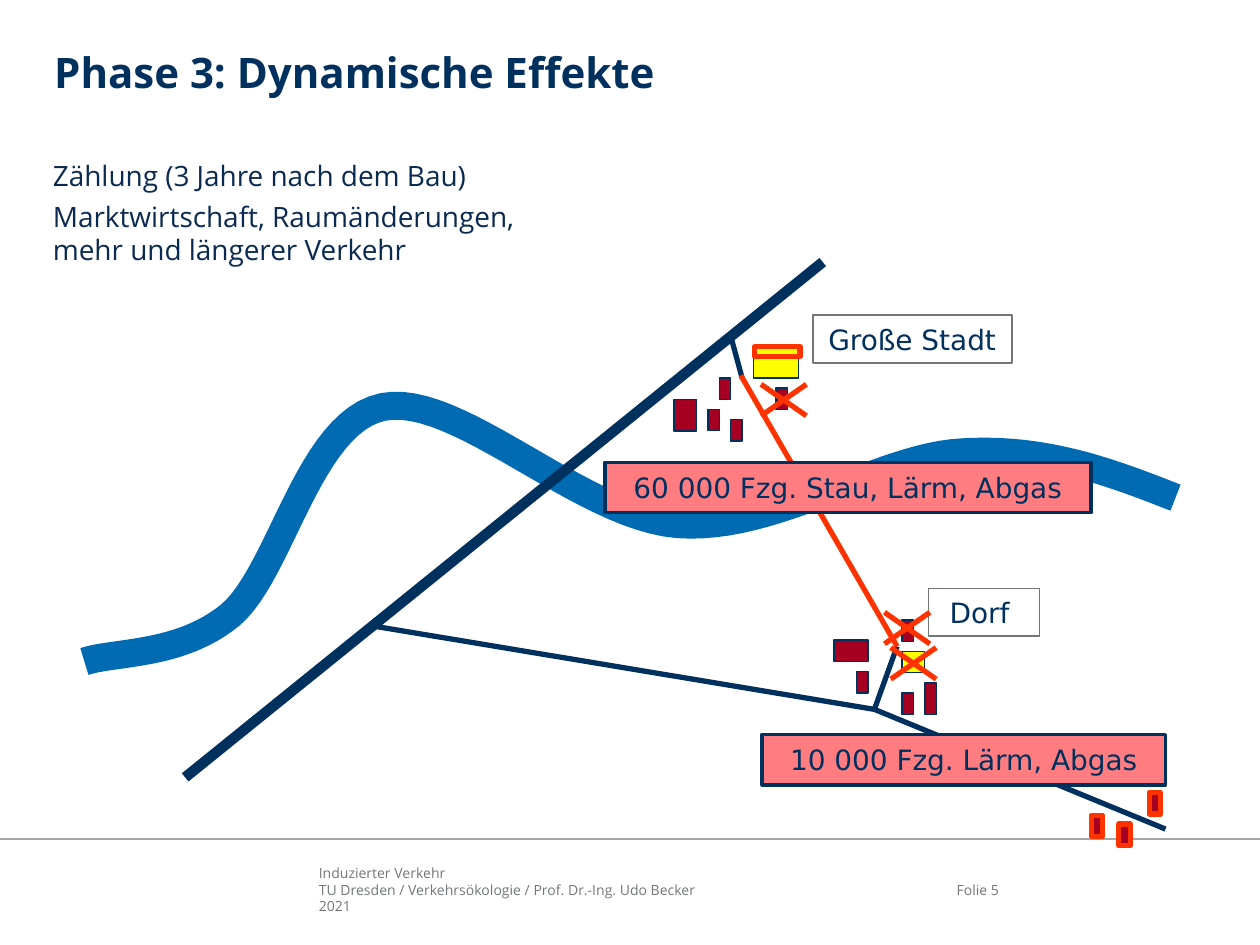
from lxml import etree
from pptx import Presentation
from pptx.dml.color import RGBColor
from pptx.enum.shapes import MSO_CONNECTOR as Connector, MSO_SHAPE as Shape
from pptx.enum.text import MSO_ANCHOR as Anchor, PP_ALIGN as Align
from pptx.oxml.ns import qn
from pptx.util import Inches, Pt

NAVY = RGBColor(0x00, 0x30, 0x5E)
BODY_BLUE = RGBColor(0x0B, 0x2A, 0x51)
RIVER_BLUE = RGBColor(0x00, 0x6A, 0xB3)
GREY = RGBColor(0x72, 0x78, 0x79)
RULE_GREY = RGBColor(0xA6, 0xA6, 0xA6)
YELLOW = RGBColor(0xFF, 0xFF, 0x00)
DARK_RED = RGBColor(0xA5, 0x00, 0x21)
ORANGE = RGBColor(0xFF, 0x33, 0x00)
PINK = RGBColor(0xFF, 0x7C, 0x80)
TEXT_FONT, LABEL_FONT = "Open Sans", "DejaVu Sans"

TITLE = ["Phase 3: Dynamische Effekte"]
BODY = ["Zählung (3 Jahre nach dem Bau)",
        "Marktwirtschaft, Raumänderungen, \vmehr und längerer Verkehr"]
FOOTER = ["Induzierter Verkehr",
          "TU Dresden / Verkehrsökologie / Prof. Dr.-Ing. Udo Becker",
          "2021"]
PAGE = ["Folie 5"]

# River: start point, then Bézier segments (control, control, end)
RIVER_START = (9.33, 3.95)
RIVER_CURVES = [
    ((8.82, 3.75), (8.3, 3.55), (7.64, 3.59)),
    ((6.98, 3.62), (6.15, 4.22), (5.38, 4.16)),
    ((4.61, 4.1), (3.63, 3.11), (3.04, 3.23)),
    ((2.45, 3.35), (2.23, 4.54), (1.83, 4.88)),
    ((1.43, 5.21), (0.91, 5.17), (0.67, 5.25)),
]
CURVE_STEPS = 24

JUNCTION, VILLAGE = (6.94, 5.63), (7.12, 5.13)
MOTORWAY = ((1.47, 6.17), (6.53, 2.08))
ROADS = [((5.89, 3), (5.8, 2.67)), (JUNCTION, VILLAGE),
         (JUNCTION, (2.97, 4.97)), (JUNCTION, (9.25, 6.58))]
CONGESTED_ROAD = ((5.88, 2.98), VILLAGE)

HOUSE = (0.09, 0.17)
SHOPS = [(5.98, 2.75, 0.36, 0.25), (7.16, 5.17, 0.18, 0.17)]
SHOP_EXTENSION = (5.99, 2.75, 0.36, 0.08)
LARGE_HOUSES = [(6.62, 5.08, 0.27, 0.17), (7.34, 5.42, 0.09, 0.25),
                (5.35, 3.17, 0.18, 0.25)]
HOUSES = [(7.16, 5.5), (7.16, 4.92), (6.8, 5.33), (5.8, 3.33),
          (6.16, 3.08), (5.71, 3), (5.62, 3.25)]
NEW_HOUSES = [(9.12, 6.29), (8.88, 6.54), (8.66, 6.47)]

CROSS_WIDTH, CROSS_HEIGHT = 0.36, 0.25
CROSSES = [(6.04, 3.05), (7.02, 4.86), (7.07, 5.14)]

PLACE_LABELS = [("Dorf ", (7.37, 4.67, 0.88, 0.38)),
                ("Große Stadt", (6.45, 2.5, 1.58, 0.38))]
TRAFFIC_LABELS = [("60 000 Fzg. Stau, Lärm, Abgas", (4.8, 3.67, 3.86, 0.4)),
                  ("10 000 Fzg. Lärm, Abgas", (6.05, 5.83, 3.2, 0.4))]

presentation = Presentation()
presentation.slide_width, presentation.slide_height = Inches(10), Inches(7.5)
slide = presentation.slides.add_slide(presentation.slide_layouts[6])


def add_text(lines, box, size, color, bold=False, align=Align.LEFT,
             anchor=Anchor.TOP, gap=0):
    frame = slide.shapes.add_textbox(*map(Inches, box)).text_frame
    frame.word_wrap = True
    frame.vertical_anchor = anchor
    frame.margin_left = frame.margin_right = 0
    frame.margin_top = frame.margin_bottom = 0
    for index, line in enumerate(lines):
        paragraph = frame.add_paragraph() if index else frame.paragraphs[0]
        paragraph.text = line
        paragraph.alignment = align
        if index and gap:
            paragraph.space_before = Pt(gap)
        font = paragraph.font
        font.name, font.size, font.bold = TEXT_FONT, Pt(size), bold
        font.color.rgb = color


def add_line(ends, color, width):
    start, end = ends
    line = slide.shapes.add_connector(
        Connector.STRAIGHT, *map(Inches, (*start, *end)))
    line.line.color.rgb = color
    line.line.width = Pt(width)
    etree.SubElement(line._element.spPr, qn("a:effectLst"))


def add_box(box, fill, color, width):
    shape = slide.shapes.add_shape(Shape.RECTANGLE, *map(Inches, box))
    shape.shadow.inherit = False
    if fill is None:
        shape.fill.background()
    else:
        shape.fill.solid()
        shape.fill.fore_color.rgb = fill
    shape.line.color.rgb = color
    shape.line.width = Pt(width)
    return shape


def add_label(text, box, fill, color, width):
    frame = add_box(box, fill, color, width).text_frame
    frame.word_wrap = True
    frame.vertical_anchor = Anchor.MIDDLE
    paragraph = frame.paragraphs[0]
    paragraph.text = text
    paragraph.alignment = Align.CENTER
    font = paragraph.font
    font.name, font.size = LABEL_FONT, Pt(16)
    font.color.rgb = NAVY


def bezier_point(points, t):
    weights = ((1 - t) ** 3, 3 * t * (1 - t) ** 2, 3 * t * t * (1 - t), t ** 3)
    return tuple(Inches(sum(w * point[axis] for w, point in zip(weights, points)))
                 for axis in (0, 1))


def add_river():
    builder = slide.shapes.build_freeform(*map(Inches, RIVER_START))
    start = RIVER_START
    for curve in RIVER_CURVES:
        builder.add_line_segments(
            [bezier_point((start, *curve), step / CURVE_STEPS)
             for step in range(1, CURVE_STEPS + 1)], close=False)
        start = curve[-1]
    river = builder.convert_to_shape()
    river.shadow.inherit = False
    river.fill.background()
    river.line.color.rgb = RIVER_BLUE
    river.line.width = Pt(16)


add_text(FOOTER, (2.53, 6.86, 4.52, 0.4), 8, GREY)
add_line(((0, 6.66), (10, 6.66)), RULE_GREY, 1)
add_text(PAGE, (7.17, 6.86, 0.76, 0.4), 8, GREY, align=Align.RIGHT,
         anchor=Anchor.MIDDLE)
add_text(TITLE, (0.43, 0.37, 9.15, 0.47), 24, NAVY, bold=True)
add_text(BODY, (0.42, 1.26, 9.16, 5.01), 16, BODY_BLUE, gap=4)

add_river()
for shop in SHOPS:
    add_box(shop, YELLOW, NAVY, 0.75)
add_line(MOTORWAY, NAVY, 6)
for house in LARGE_HOUSES + [(*corner, *HOUSE) for corner in HOUSES]:
    add_box(house, DARK_RED, NAVY, 0.75)
for text, box in PLACE_LABELS:
    add_label(text, box, None, GREY, 1)
for road in ROADS:
    add_line(road, NAVY, 3)
add_line(CONGESTED_ROAD, ORANGE, 3)

for text, box in TRAFFIC_LABELS:
    add_label(text, box, PINK, NAVY, 2)
add_box(SHOP_EXTENSION, YELLOW, ORANGE, 3)
for left, top in CROSSES:
    right, bottom = left + CROSS_WIDTH, top + CROSS_HEIGHT
    add_line(((right, top), (left, bottom)), ORANGE, 3)
    add_line(((left, top), (right, bottom)), ORANGE, 3)
for corner in NEW_HOUSES:
    add_box((*corner, *HOUSE), DARK_RED, ORANGE, 3)

presentation.save("out.pptx")
